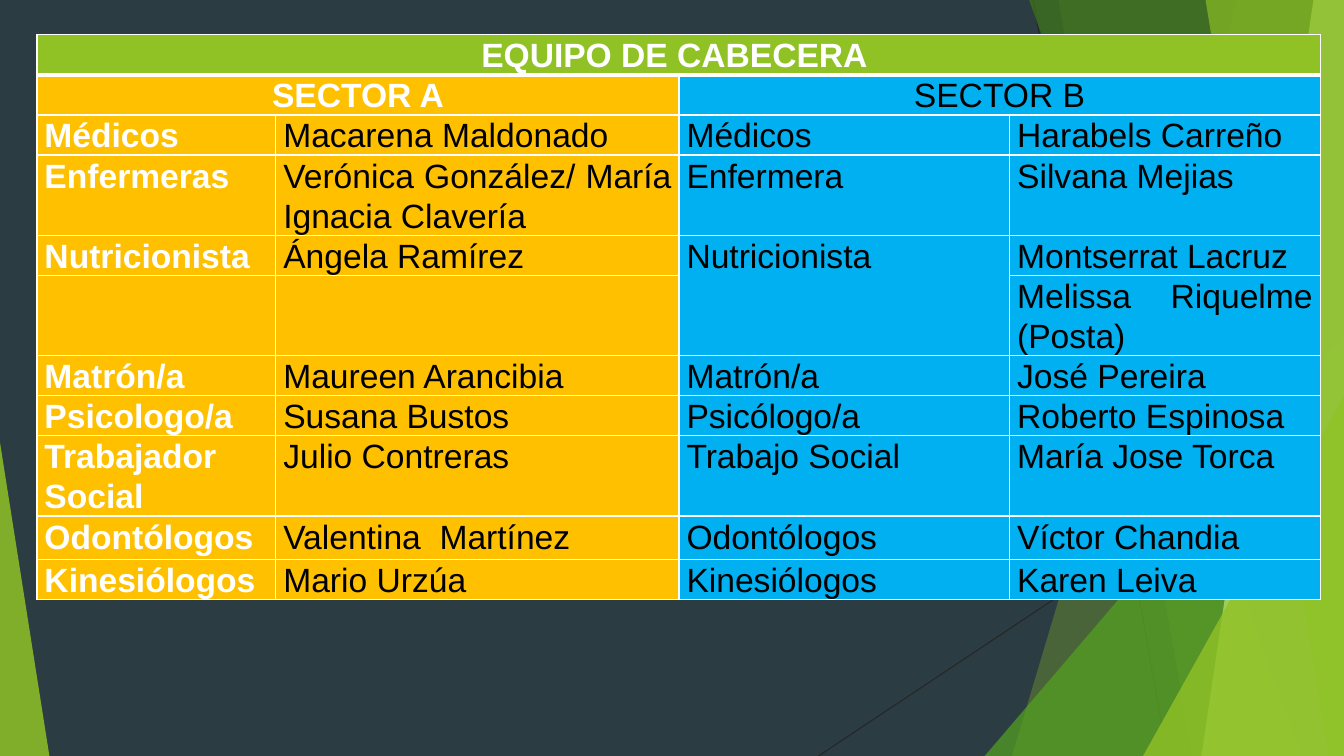
from dataclasses import dataclass

from lxml.etree import SubElement
from pptx import Presentation
from pptx.dml.color import RGBColor
from pptx.enum.shapes import MSO_CONNECTOR, MSO_SHAPE
from pptx.enum.text import PP_ALIGN as ALIGN
from pptx.oxml.ns import qn
from pptx.util import Pt


@dataclass(frozen=True)
class Theme:
    font: str = "Arial"
    size: float = 24
    spacing: float = 1.07
    background: str = "2C3C43"
    line: str = "262626"
    white: str = "FFFFFF"
    black: str = "000000"
    green: str = "90C226"
    mid_green: str = "54A021"
    dark_green: str = "3F7819"
    pale_green: str = "C0E474"
    sector_a: str = "FFC000"
    sector_b: str = "00B0F0"


THEME = Theme()
WIDTH, HEIGHT = 960, 540
TABLE_LEFT, TABLE_TOP = 26.4, 24.8
COLUMNS = [170.6, 288, 236.2, 221.8]
LINE_HEIGHT = 28.6
ROW_HEIGHTS = [LINE_HEIGHT * n for n in (1, 1, 1, 2, 1, 2, 1, 1, 2)] + [31, LINE_HEIGHT]
TEAM = [
    ["Médicos", "Macarena Maldonado", "Médicos", "Harabels Carreño"],
    ["Enfermeras", "Verónica González/ María Ignacia Clavería", "Enfermera", "Silvana Mejias"],
    ["Nutricionista", "Ángela Ramírez", "Nutricionista", "Montserrat Lacruz"],
    ["", "", "", "Melissa Riquelme (Posta)"],
    ["Matrón/a", "Maureen Arancibia", "Matrón/a", "José Pereira"],
    ["Psicologo/a", "Susana Bustos", "Psicólogo/a", "Roberto Espinosa"],
    ["Trabajador Social", "Julio Contreras", "Trabajo Social", "María Jose Torca"],
    ["Odontólogos", "Valentina  Martínez", "Odontólogos", "Víctor Chandia"],
    ["Kinesiólogos", "Mario Urzúa", "Kinesiólogos", "Karen Leiva"],
]


def rgb(color):
    return RGBColor.from_string(color)


def paint(sp, color, opacity):
    """Give a shape a translucent fill, no outline and no shadow."""
    sp.shadow.inherit = False
    sp.line.fill.background()
    sp.fill.solid()
    sp.fill.fore_color.rgb = rgb(color)
    clr = sp.fill._xPr.find(qn("a:solidFill"))[0]
    SubElement(clr, qn("a:alpha"), val=str(opacity * 1000))


def add_band(slide, top_x, bottom_x, color, opacity):
    """Fill the area between a slanted edge and the right side of the slide."""
    builder = slide.shapes.build_freeform(Pt(top_x), 0, scale=1.0)
    corners = [(WIDTH, 0), (WIDTH, HEIGHT), (bottom_x, HEIGHT)]
    builder.add_line_segments([(Pt(x), Pt(y)) for x, y in corners], close=True)
    paint(builder.convert_to_shape(), color, opacity)


def add_triangle(slide, left, top, width, apex, color, opacity):
    """Add a triangle that stands on the bottom edge of the slide."""
    sp = slide.shapes.add_shape(MSO_SHAPE.ISOSCELES_TRIANGLE, Pt(left), Pt(top),
                                Pt(width), Pt(HEIGHT - top))
    sp.adjustments[0] = apex
    paint(sp, color, opacity)


def add_line(slide, *ends):
    line = slide.shapes.add_connector(MSO_CONNECTOR.STRAIGHT, *map(Pt, ends))
    line.line.color.rgb = rgb(THEME.line)
    line.line.width = Pt(0.75)
    SubElement(line._element.spPr, qn("a:effectLst"))


def add_backdrop(slide):
    slide.background.fill.solid()
    slide.background.fill.fore_color.rgb = rgb(THEME.background)
    add_line(slide, 738, 0, 833.8, HEIGHT)
    add_line(slide, WIDTH, 290.2, 584.6, HEIGHT)
    add_band(slide, 884.2, 722.9, THEME.green, 30)
    add_band(slide, 756, 851.8, THEME.green, 20)
    add_triangle(slide, 703.4, 239.8, 256.6, 1, THEME.mid_green, 72)
    add_band(slide, 735.1, 929.5, THEME.dark_green, 70)
    add_band(slide, 938.2, 858.2, THEME.pale_green, 70)
    add_band(slide, 861.1, 949, THEME.green, 65)
    add_triangle(slide, 816.5, 283, 143.5, 1, THEME.green, 80)
    add_triangle(slide, 0, 316.1, 35.3, 0, THEME.green, 85)


def write(cell, text, color=THEME.black, bold=False, align=ALIGN.JUSTIFY):
    p = cell.text_frame.paragraphs[0]
    p.alignment = align
    p.line_spacing = THEME.spacing
    r = p.add_run()
    r.text = text
    r.font.name = THEME.font
    r.font.size = Pt(THEME.size)
    r.font.bold = bold
    r.font.color.rgb = rgb(color)


def format_cell(cell, fill, top=1, bottom=1):
    """Set margins, white borders of the given widths, and fill."""
    cell.margin_left = cell.margin_right = Pt(5.4)
    cell.margin_top = cell.margin_bottom = 0
    tc_pr = cell._tc.get_or_add_tcPr()
    for side, width in (("L", 1), ("R", 1), ("T", top), ("B", bottom)):
        ln = SubElement(tc_pr, qn(f"a:ln{side}"), w=str(Pt(width)))
        SubElement(SubElement(ln, qn("a:solidFill")), qn("a:srgbClr"), val=THEME.white)
    cell.fill.solid()
    cell.fill.fore_color.rgb = rgb(fill)


def add_team_table(slide):
    frame = slide.shapes.add_table(len(ROW_HEIGHTS), len(COLUMNS), Pt(TABLE_LEFT), Pt(TABLE_TOP),
                                   Pt(sum(COLUMNS)), Pt(sum(ROW_HEIGHTS)))
    table = frame.table
    table.first_row = table.horz_banding = False
    for column, width in zip(table.columns, COLUMNS):
        column.width = Pt(width)
    for row, height in zip(table.rows, ROW_HEIGHTS):
        row.height = Pt(height)

    for i, row in enumerate(table.rows):
        for j, cell in enumerate(row.cells):
            sector = THEME.sector_a if j < 2 else THEME.sector_b
            format_cell(cell, sector if i else THEME.green,
                        top=3 if i == 1 else 1, bottom=1 if i else 3)

    for first, last in (((0, 0), (0, 3)), ((1, 0), (1, 1)), ((1, 2), (1, 3)), ((4, 2), (5, 2))):
        table.cell(*first).merge(table.cell(*last))

    strong = dict(color=THEME.white, bold=True)
    write(table.cell(0, 0), "EQUIPO DE CABECERA ", align=ALIGN.CENTER, **strong)
    write(table.cell(1, 0), "SECTOR A", align=ALIGN.CENTER, **strong)
    write(table.cell(1, 2), "SECTOR B", align=ALIGN.CENTER)
    for i, members in enumerate(TEAM, start=2):
        for j, text in enumerate(members):
            if text:
                write(table.cell(i, j), text, **({} if j else strong))


def main():
    prs = Presentation()
    prs.slide_width, prs.slide_height = Pt(WIDTH), Pt(HEIGHT)
    slide = prs.slides.add_slide(prs.slide_layouts[6])
    add_backdrop(slide)
    add_team_table(slide)
    prs.save("out.pptx")


if __name__ == "__main__":
    main()
